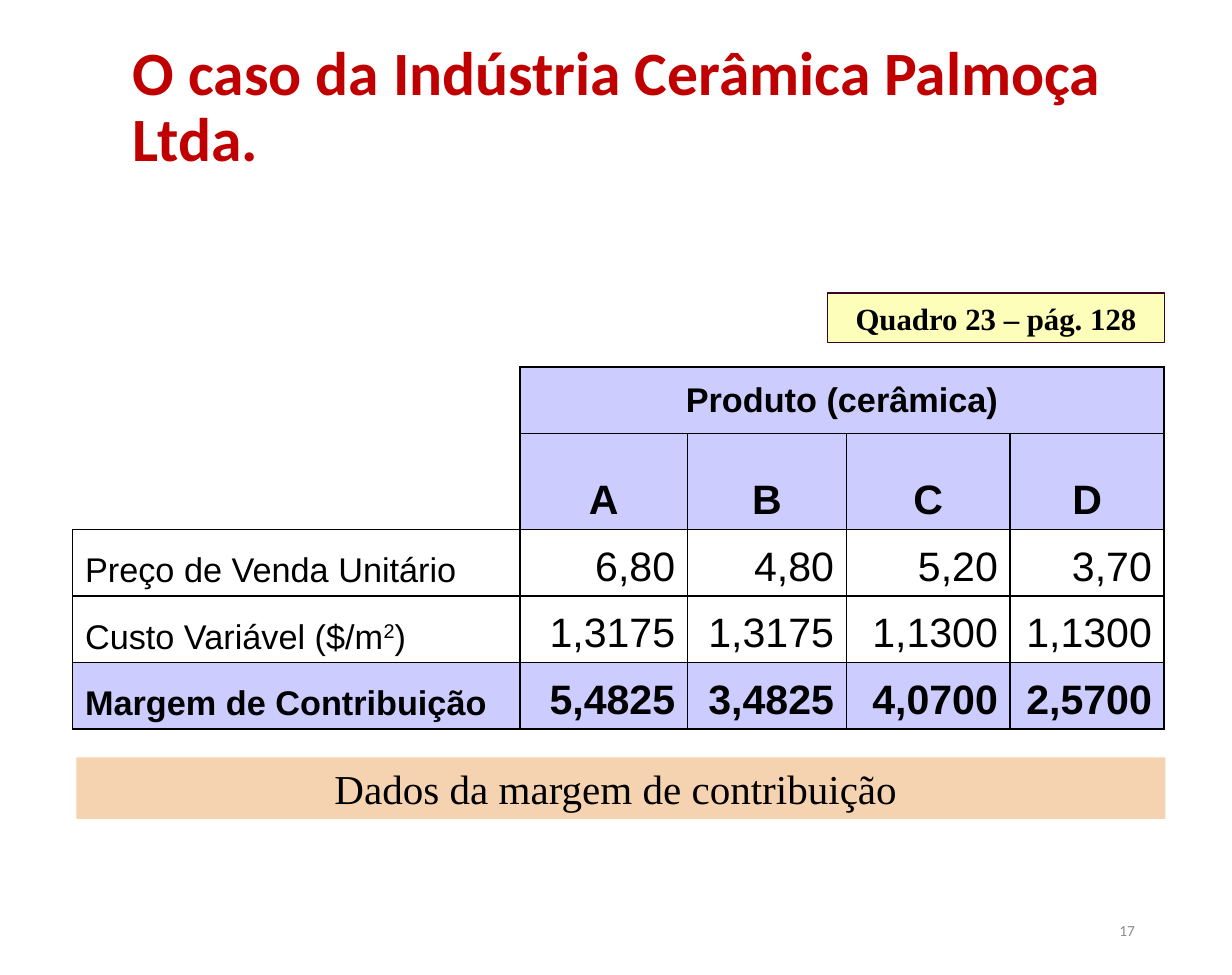
from lxml import etree
from pptx import Presentation
from pptx.dml.color import RGBColor
from pptx.enum.shapes import MSO_SHAPE as Shape
from pptx.enum.text import MSO_ANCHOR as Anchor, PP_ALIGN as Align
from pptx.oxml.ns import qn
from pptx.util import Inches, Pt

WIDTH, HEIGHT = Pt(720), Pt(570)
BLACK = RGBColor(0x00, 0x00, 0x00)
WHITE = RGBColor(0xFF, 0xFF, 0xFF)
RED = RGBColor(0xC0, 0x00, 0x00)
GRAY = RGBColor(0x8C, 0x8C, 0x8C)
LILAC = RGBColor(0xCC, 0xCC, 0xFF)
PEACH = RGBColor(0xF6, 0xD3, 0xB0)
YELLOW = RGBColor(0xFC, 0xFE, 0xB9)
WINE = RGBColor(0x3C, 0x00, 0x23)

PRODUCTS = ["A", "B", "C", "D"]
# Label pieces alternate between normal and superscript text
ROWS = [
    (["Preço de Venda Unitário"], ["6,80", "4,80", "5,20", "3,70"]),
    (["Custo Variável ($/m", "2", ")"], ["1,3175", "1,3175", "1,1300", "1,1300"]),
    (["Margem de Contribuição"], ["5,4825", "3,4825", "4,0700", "2,5700"]),
]
COLUMN_WIDTHS = [3.63, 1.36, 1.29, 1.33, 1.25]
ROW_HEIGHTS = [0.54, 0.78, 0.54, 0.54, 0.54]


def write(frame, pieces, font="Arial", size=24, color=BLACK, bold=False,
          align=Align.LEFT, spacing=None):
    """Write one paragraph; every second piece is superscript."""
    para = frame.paragraphs[0]
    para.alignment = align
    if spacing:
        para.line_spacing = spacing
    for index, piece in enumerate(pieces):
        span = para.add_run()
        span.text = piece
        span.font.name, span.font.size, span.font.bold = font, Pt(size), bold
        span.font.color.rgb = color
        if index % 2:
            span._r.get_or_add_rPr().set("baseline", "30000")


def add_text(page, area, text, **style):
    box = page.shapes.add_textbox(*map(Inches, area))
    box.text_frame.word_wrap = True
    box.text_frame.vertical_anchor = Anchor.MIDDLE
    write(box.text_frame, [text], **style)


def add_label(page, area, text, fill, line=None, **style):
    box = page.shapes.add_shape(Shape.RECTANGLE, *map(Inches, area))
    box.shadow.inherit = False
    box.fill.solid()
    box.fill.fore_color.rgb = fill
    if line:
        box.line.color.rgb = line
        box.line.width = Pt(0.75)
    else:
        box.line.fill.background()
    box.text_frame.word_wrap = True
    box.text_frame.vertical_anchor = Anchor.MIDDLE
    write(box.text_frame, [text], font="Times New Roman", align=Align.CENTER, **style)


def set_borders(cell, sides):
    """Draw the named sides in black and clear the others."""
    props = cell._tc.get_or_add_tcPr()
    for index, side in enumerate("LRTB"):
        line = etree.Element(qn(f"a:ln{side}"), w=str(Pt(1)))
        if side in sides:
            fill = etree.SubElement(line, qn("a:solidFill"))
            etree.SubElement(fill, qn("a:srgbClr"), val=str(BLACK))
        else:
            etree.SubElement(line, qn("a:noFill"))
        props.insert(index, line)


def fill_cell(cell, pieces, fill, anchor=Anchor.BOTTOM, **style):
    cell.fill.solid()
    cell.fill.fore_color.rgb = fill
    cell.vertical_anchor = anchor
    write(cell.text_frame, pieces, **style)


def add_margin_table(page, left, top):
    area = (left, top, sum(COLUMN_WIDTHS), sum(ROW_HEIGHTS))
    table = page.shapes.add_table(len(ROW_HEIGHTS), len(COLUMN_WIDTHS),
                                  *map(Inches, area)).table
    table.first_row = table.horz_banding = False
    for column, width in zip(table.columns, COLUMN_WIDTHS):
        column.width = Inches(width)
    for row, height in zip(table.rows, ROW_HEIGHTS):
        row.height = Inches(height)

    # Borders: the empty corner has only its inner sides
    for r in range(len(ROW_HEIGHTS)):
        for c in range(len(COLUMN_WIDTHS)):
            corner = r < 2 and c == 0
            set_borders(table.cell(r, c), "RB" if corner else "LRTB")

    # Header
    corner = table.cell(0, 0)
    corner.merge(table.cell(1, 0))
    corner.fill.background()
    header = table.cell(0, 1)
    header.merge(table.cell(0, len(PRODUCTS)))
    fill_cell(header, ["Produto (cerâmica)"], LILAC, Anchor.MIDDLE,
              size=20, bold=True, align=Align.CENTER)
    for c, product in enumerate(PRODUCTS, 1):
        fill_cell(table.cell(1, c), [product], LILAC, bold=True, align=Align.CENTER)

    # Body, with the last row as the result
    for r, (label, values) in enumerate(ROWS, 2):
        result = r == len(ROW_HEIGHTS) - 1
        fill = LILAC if result else WHITE
        fill_cell(table.cell(r, 0), label, fill, size=20, bold=result,
                  align=Align.JUSTIFY)
        for c, value in enumerate(values, 1):
            fill_cell(table.cell(r, c), [value], fill, bold=result, align=Align.RIGHT)


def main():
    deck = Presentation()
    deck.slide_width, deck.slide_height = WIDTH, HEIGHT
    page = deck.slides.add_slide(deck.slide_layouts[6])

    # Title
    add_text(page, (0.98, 0.22, 8.71, 1.32),
             "O caso da Indústria Cerâmica Palmoça Ltda.",
             font="Calibri", size=36, color=RED, bold=True, spacing=0.9)
    # Table with its source tag and caption
    add_margin_table(page, 0.59, 2.98)
    add_label(page, (0.62, 6.15, 8.84, 0.5), "Dados da margem de contribuição ", PEACH)
    add_label(page, (6.72, 2.38, 2.73, 0.4), "Quadro 23 – pág. 128", YELLOW, WINE,
              size=18, bold=True)
    # Page number
    add_text(page, (7.06, 7.34, 2.25, 0.42), "17", font="Calibri", size=9,
             color=GRAY, align=Align.RIGHT)
    deck.save("out.pptx")


if __name__ == "__main__":
    main()
